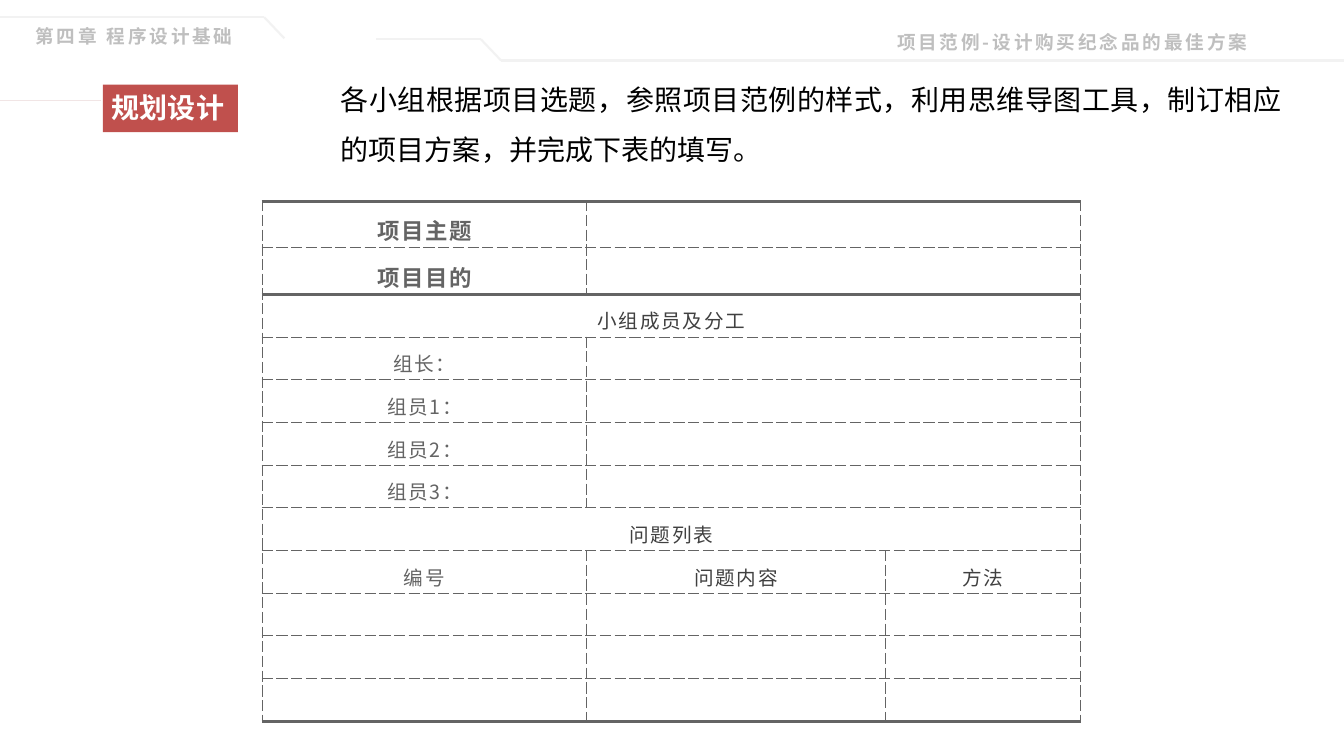
from dataclasses import dataclass

from lxml.etree import SubElement
from pptx import Presentation
from pptx.dml.color import RGBColor
from pptx.enum.shapes import MSO_CONNECTOR as Connector, MSO_SHAPE as Shape
from pptx.enum.text import MSO_ANCHOR as Anchor, MSO_AUTO_SIZE as AutoSize, PP_ALIGN as Align
from pptx.oxml.ns import qn
from pptx.util import Inches, Pt


@dataclass(frozen=True)
class Theme:
    """Colours, font and type sizes of the slide."""
    font: str = "Noto Sans CJK SC"
    rule: str = "F2F2F2"
    header: str = "BFBFBF"
    red: str = "C0504D"
    dark_red: str = "953735"
    pink: str = "D99694"
    white: str = "FFFFFF"
    black: str = "000000"
    grey: str = "646464"
    dark: str = "404040"
    header_size: float = 13.3
    main_size: float = 20
    topic_size: float = 16
    cell_size: float = 14


T = Theme()
HEADER_RULES = [
    (0, 0.17, 2.62, 0.17), (2.62, 0.17, 2.82, 0.38), (3.73, 0.39, 4.77, 0.39),
    (4.77, 0.39, 4.97, 0.6), (4.97, 0.6, 13.33, 0.6),
]
TAG = [[
    (0.55, 0.84), (1.03, 0.84), (1.03, 1.31), (0.55, 1.31),
    (0.53, 1.31, 0.51, 1.29, 0.51, 1.28), (0.51, 1.14), (0.42, 1.07), (0.51, 1),
    (0.51, 0.87), (0.51, 0.85, 0.53, 0.84, 0.55, 0.84),
]]
PENCIL = [
    [(0.95, 0.99), (0.85, 0.9), (0.87, 0.88, 0.91, 0.88, 0.94, 0.91),
     (0.96, 0.93, 0.97, 0.97, 0.95, 0.99)],
    [(0.87, 0.94), (0.84, 0.91), (0.65, 1.11), (0.67, 1.13)],
    [(0.9, 0.96), (0.88, 0.95), (0.68, 1.14), (0.7, 1.16)],
    [(0.71, 1.17), (0.74, 1.2), (0.94, 1), (0.91, 0.97)],
    [(0.61, 1.19), (0.61, 1.2, 0.62, 1.21, 0.63, 1.22),
     (0.63, 1.22, 0.64, 1.23, 0.65, 1.23), (0.73, 1.21), (0.64, 1.11)],
    [(0.61, 1.21), (0.6, 1.24), (0.61, 1.25), (0.63, 1.24),
     (0.62, 1.24, 0.62, 1.23, 0.62, 1.23), (0.61, 1.22, 0.61, 1.22, 0.61, 1.21)],
]
COLUMNS = [3.22, 2.96, 1.94]
ROWS = [
    ["项目主题", ""], ["项目目的", ""], ["小组成员及分工"],
    ["组长：", ""], ["组员1：", ""], ["组员2：", ""], ["组员3：", ""],
    ["问题列表"], ["编号", "问题内容", "方法"],
    ["", "", ""], ["", "", ""], ["", "", ""],
]
TOPIC_ROWS, TOPIC_HEIGHT, TABLE_HEIGHT = 2, 0.46, 5.16


def rgb(value):
    """Turn a hex string into a colour."""
    return RGBColor.from_string(value)


def put_text(tf, text, size, color, bold=False, spacing=0, align=Align.LEFT, line=1.0):
    """Write one formatted paragraph into a text frame."""
    p = tf.paragraphs[0]
    p.alignment, p.line_spacing, p.space_before = align, line, Pt(0)
    r = p.add_run()
    r.text = text
    r.font.size, r.font.bold, r.font.name = Pt(size), bold, T.font
    r.font.color.rgb = rgb(color)
    rpr = r._r.get_or_add_rPr()
    rpr.set("spc", str(round(spacing * 100)))
    SubElement(rpr, qn("a:ea"), typeface=T.font)
    return p


def place(shape, left, top, width, height):
    """Move a shape and bring it to the front."""
    shape.left, shape.top = Inches(left), Inches(top)
    shape.width, shape.height = Inches(width), Inches(height)
    shape.element.getparent().append(shape.element)


def paint(shape, color):
    """Give a shape a flat fill with no line or shadow."""
    shape.shadow.inherit = False
    shape.fill.solid()
    shape.fill.fore_color.rgb = rgb(color)
    shape.line.fill.background()


def add_rule(s, x1, y1, x2, y2):
    """Draw one pale header line."""
    c = s.shapes.add_connector(Connector.STRAIGHT, Inches(x1), Inches(y1), Inches(x2), Inches(y2))
    c.line.color.rgb, c.line.width = rgb(T.rule), Pt(1.5)
    SubElement(c._element.spPr, qn("a:effectLst"))


def add_header(s, text, left, top, width, height):
    """Add a pale running header."""
    tf = s.shapes.add_textbox(Inches(left), Inches(top), Inches(width), Inches(height)).text_frame
    tf.word_wrap, tf.vertical_anchor = True, Anchor.MIDDLE
    tf.margin_left = tf.margin_right = Inches(0.13)
    tf.margin_top = tf.margin_bottom = Inches(0.07)
    put_text(tf, text, T.header_size, T.header, bold=True, spacing=2, align=Align.CENTER)


def flatten(path, steps=6):
    """Turn lines and cubic curves into a list of points."""
    points = []
    for seg in path:
        if len(seg) == 2:
            points.append(seg)
            continue
        (x0, y0), (x1, y1, x2, y2, x3, y3) = points[-1], seg
        for i in range(1, steps + 1):
            t = i / steps
            a, b, c, d = (1 - t) ** 3, 3 * t * (1 - t) ** 2, 3 * t * t * (1 - t), t ** 3
            points.append((a * x0 + b * x1 + c * x2 + d * x3, a * y0 + b * y1 + c * y2 + d * y3))
    return points


def add_outline(s, paths, color):
    """Draw closed contours as one filled freeform."""
    contours = [flatten(path) for path in paths]
    builder = s.shapes.build_freeform(*contours[0][0], scale=Inches(1))
    for i, points in enumerate(contours):
        if i:
            builder.move_to(*points[0])
        builder.add_line_segments(points[1:], close=True)
    paint(builder.convert_to_shape(), color)


def dash_paths():
    """Work out three dashed trails with rounded ends."""
    paths = []
    for top, end in ((0.99, 2.85), (1.12, 3.11), (1.26, 2.96)):
        bottom = top + 0.05
        mid = top + 0.025
        paths.append([(2.47, top), (2.47, bottom), (2.36, bottom),
                      (2.34, bottom, 2.33, mid + 0.01, 2.33, mid),
                      (2.33, mid - 0.01, 2.34, top, 2.36, top)])
        left = 2.52
        while left + 0.1 < end:
            right = left + 0.05
            paths.append([(left, top), (right, top), (right, bottom), (left, bottom)])
            left += 0.102
        bend = end - 0.02
        paths.append([(left, top), (bend, top), (end - 0.01, top, end, mid - 0.01, end, mid),
                      (end, mid + 0.01, end - 0.01, bottom, bend, bottom), (left, bottom)])
    return paths


def add_badge(s):
    """Draw the pencil badge and its title."""
    box = s.shapes.add_shape(Shape.ROUNDED_RECTANGLE, Inches(1.02), Inches(0.84), Inches(1.34), Inches(0.47))
    box.adjustments[0] = 0
    paint(box, T.red)
    add_outline(s, TAG, T.dark_red)
    add_outline(s, PENCIL, T.pink)
    add_outline(s, dash_paths(), T.red)
    title = s.shapes.title
    place(title, 1.01, 0.85, 1.32, 0.44)
    tf = title.text_frame
    tf.word_wrap, tf.auto_size, tf.vertical_anchor = False, AutoSize.SHAPE_TO_FIT_TEXT, Anchor.TOP
    put_text(tf, "规划设计", T.main_size, T.white, bold=True)


def add_task(s):
    """Fill the body placeholder with the task."""
    body = s.placeholders[1]
    place(body, 3.28, 0.6, 9.53, 1.11)
    tf = body.text_frame
    tf.word_wrap, tf.auto_size = True, AutoSize.SHAPE_TO_FIT_TEXT
    p = put_text(tf, "各小组根据项目选题，参照项目范例的样式，利用思维导图工具，制订相应的项目方案，并完成下表的填写。",
                 T.main_size, T.black, align=Align.JUSTIFY, line=1.5)
    ppr = p._p.get_or_add_pPr()
    ppr.set("marL", "0")
    ppr.set("indent", "0")
    SubElement(ppr, qn("a:buNone"))


def set_borders(cell, heavy):
    """Give a cell dashed borders, with solid ones on the heavy sides."""
    tcpr = cell._tc.get_or_add_tcPr()
    for i, side in enumerate("LRTB"):
        width, dash = (2.25, "solid") if side in heavy else (0.75, "sysDash")
        ln = SubElement(tcpr, qn(f"a:ln{side}"), w=str(Pt(width)))
        SubElement(SubElement(ln, qn("a:solidFill")), qn("a:srgbClr"), val=T.grey)
        SubElement(ln, qn("a:prstDash"), val=dash)
        tcpr.insert(i, ln)


def fill_cell(cell, text, topic, color):
    """Set the margins and text of a cell."""
    cell.vertical_anchor = Anchor.MIDDLE
    cell.margin_left = cell.margin_right = Inches(0.19)
    cell.margin_top = cell.margin_bottom = Inches(0.06 if text else 0.02)
    if text:
        put_text(cell.text_frame, text, T.topic_size if topic else T.cell_size, color,
                 bold=topic, spacing=1.2, align=Align.CENTER, line=1.2)


def add_plan_table(s):
    """Build the project plan table."""
    last = len(ROWS) - 1
    table = s.shapes.add_table(len(ROWS), len(COLUMNS), Inches(2.6), Inches(2),
                               Inches(sum(COLUMNS)), Inches(TABLE_HEIGHT)).table
    table.first_row = table.horz_banding = False
    for column, width in zip(table.columns, COLUMNS):
        column.width = Inches(width)
    plain_height = (TABLE_HEIGHT - TOPIC_ROWS * TOPIC_HEIGHT) / (len(ROWS) - TOPIC_ROWS)
    for i, texts in enumerate(ROWS):
        topic = i < TOPIC_ROWS
        table.rows[i].height = Inches(TOPIC_HEIGHT if topic else plain_height)
        heavy = ("T" if i in (0, TOPIC_ROWS) else "") + ("B" if i in (TOPIC_ROWS - 1, last) else "")
        for j in range(len(COLUMNS)):
            cell = table.cell(i, j)
            cell.fill.solid()
            cell.fill.fore_color.rgb = rgb(T.white)
            set_borders(cell, heavy)
        for j, text in enumerate(texts):
            color = T.grey if j == 0 and len(texts) > 1 else T.dark
            fill_cell(table.cell(i, j), text, topic, color)
        if len(texts) < len(COLUMNS):
            table.cell(i, len(texts) - 1).merge(table.cell(i, len(COLUMNS) - 1))


def main():
    """Build the slide and save it."""
    prs = Presentation()
    prs.slide_width, prs.slide_height = Inches(13.33), Inches(7.5)
    s = prs.slides.add_slide(prs.slide_layouts[1])
    for ends in HEADER_RULES:
        add_rule(s, *ends)
    add_header(s, "第四章 程序设计基础", -0.05, 0.11, 2.76, 0.49)
    add_badge(s)
    add_task(s)
    add_plan_table(s)
    add_header(s, "项目范例-设计购买纪念品的最佳方案", 7.75, 0.18, 5.77, 0.48)
    prs.save("out.pptx")


if __name__ == "__main__":
    main()
